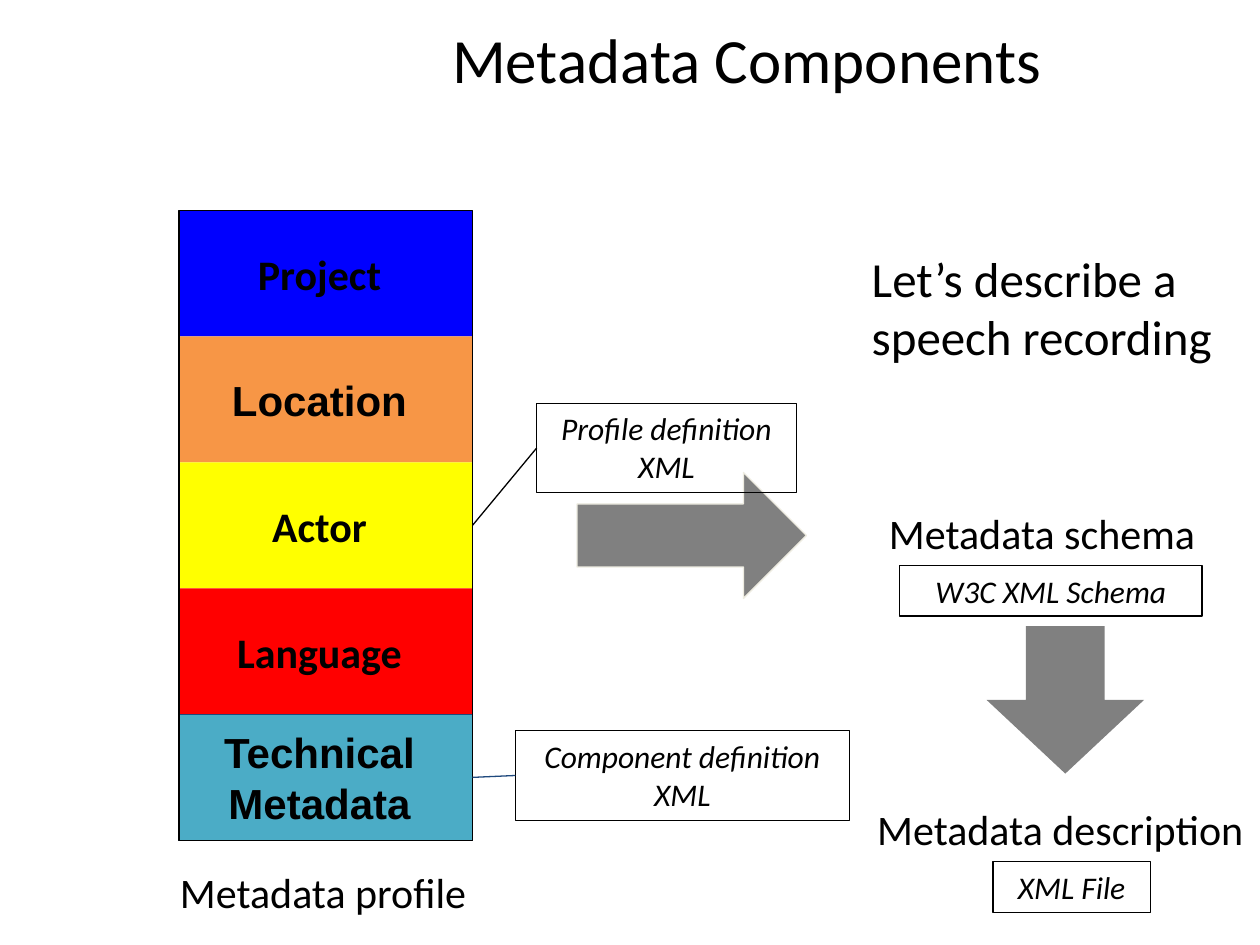
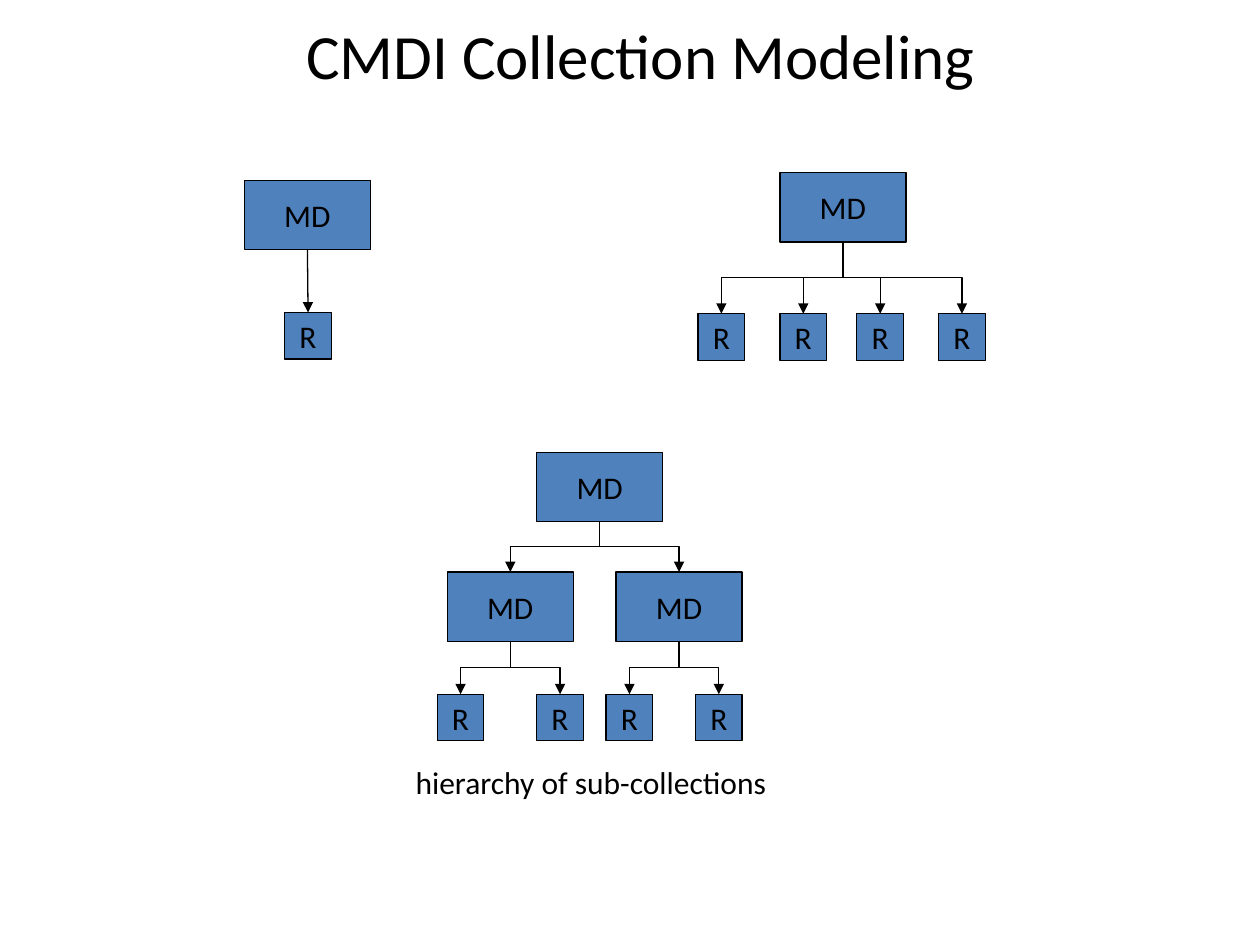
from dataclasses import dataclass

from lxml import etree
from pptx import Presentation
from pptx.dml.color import RGBColor
from pptx.enum.shapes import MSO_CONNECTOR, MSO_SHAPE
from pptx.enum.text import MSO_ANCHOR, MSO_AUTO_SIZE, PP_ALIGN
from pptx.oxml.ns import qn
from pptx.util import Inches, Pt

RECTANGLE = MSO_SHAPE.RECTANGLE
RIGHT_ARROW, DOWN_ARROW = MSO_SHAPE.RIGHT_ARROW, MSO_SHAPE.DOWN_ARROW
STRAIGHT, ELBOW = MSO_CONNECTOR.STRAIGHT, MSO_CONNECTOR.ELBOW
LEFT, CENTER = PP_ALIGN.LEFT, PP_ALIGN.CENTER
TOP, MIDDLE = MSO_ANCHOR.TOP, MSO_ANCHOR.MIDDLE
GROW, FIXED = MSO_AUTO_SIZE.SHAPE_TO_FIT_TEXT, MSO_AUTO_SIZE.NONE
TOP_SIDE, LEFT_SIDE, BOTTOM_SIDE, RIGHT_SIDE = 0, 1, 2, 3


@dataclass(frozen=True)
class Theme:
    font: str = "Calibri"
    band_font: str = "Arial"
    black: str = "000000"
    navy: str = "1F497D"
    node: str = "4F81BD"
    gray: str = "808080"
    cream: str = "EEECE1"
    blue: str = "0000FF"
    orange: str = "F79646"
    yellow: str = "FFFF00"
    red: str = "FF0000"
    teal: str = "4BACC6"
    title: int = 36
    note: int = 28
    label: int = 24
    small: int = 18
    line: float = 0.75


THEME = Theme()


def add_box(slide, place, text="", size=THEME.small, kind=RECTANGLE, fill=None,
            line=None, font=THEME.font, align=CENTER, anchor=TOP,
            wrap=False, grow=False, bold=False, italic=False):
    """Add a preset shape; without fill and line it is a plain label."""
    shape = slide.shapes.add_shape(kind, *map(Inches, place))
    shape.shadow.inherit = False
    for part, color in ((shape.fill, fill), (shape.line.fill, line)):
        if color:
            part.solid()
            part.fore_color.rgb = RGBColor.from_string(color)
        else:
            part.background()
    if line:
        shape.line.width = Pt(THEME.line)
    if text:
        text_frame = shape.text_frame
        text_frame.text = text
        text_frame.word_wrap = wrap
        text_frame.auto_size = GROW if grow else FIXED
        text_frame.vertical_anchor = anchor
        for paragraph in text_frame.paragraphs:
            paragraph.alignment = align
            for run in paragraph.runs:
                run.font.name, run.font.size = font, Pt(size)
                run.font.bold, run.font.italic = bold, italic
                run.font.color.rgb = RGBColor.from_string(THEME.black)
    return shape


def add_link(slide, source, target, sides, color=THEME.black, arrow=False, bent=False):
    """Join two shapes by a straight line, or by a bent one from bottom to top."""
    if bent:
        start_x, start_y = source.left + source.width // 2, source.top + source.height
        run, drop = target.left + target.width // 2 - start_x, target.top - start_y
        # The unturned frame shares its centre with the turned one
        left = start_x + (run - drop) // 2
        top = start_y + (drop - abs(run)) // 2
        ends = (left, left + drop) if run < 0 else (left + drop, left)
        link = slide.shapes.add_connector(ELBOW, ends[0], top, ends[1], top + abs(run))
        turn = 90 if run < 0 else 270
        link._element.spPr.find(qn("a:xfrm")).set("rot", str(turn * 60000))
    else:
        link = slide.shapes.add_connector(STRAIGHT, 0, 0, 0, 0)
        link.begin_connect(source, sides[0])
        link.end_connect(target, sides[1])
    link.line.color.rgb = RGBColor.from_string(color)
    link.line.width = Pt(THEME.line)
    if arrow:
        etree.SubElement(link.line._get_or_add_ln(), qn("a:tailEnd"), type="triangle")
    etree.SubElement(link._element.spPr, qn("a:effectLst"))


presentation = Presentation()
presentation.slide_width, presentation.slide_height = Inches(10), Inches(7.5)
blank = presentation.slide_layouts[6]

# Slide 1: metadata components
slide = presentation.slides.add_slide(blank)
add_box(slide, (1.85, 0, 8.15, 0.92), "Metadata Components", THEME.title,
        anchor=MIDDLE, wrap=True)

# Stack of component bands
band_left, band_top, band_width, band_height = 1.42, 1.67, 2.33, 1
bands = [
    ("Project", THEME.blue, None, THEME.font),
    ("Location", THEME.orange, None, THEME.band_font),
    ("Actor", THEME.yellow, None, THEME.font),
    ("Language", THEME.red, None, THEME.font),
    ("Technical\nMetadata", THEME.teal, THEME.navy, THEME.band_font),
]
for index, (name, fill, line, font) in enumerate(bands):
    band = add_box(slide, (band_left, band_top + index * band_height, band_width, band_height),
                   name, THEME.label, fill=fill, line=line, font=font,
                   anchor=MIDDLE, wrap=True, bold=True)
    band.text_frame.margin_left = 0
technical_band = band

# Block arrows
add_box(slide, (4.58, 3.75, 1.82, 1), kind=RIGHT_ARROW, fill=THEME.gray, line=THEME.cream)
add_box(slide, (7.83, 4.97, 1.25, 1.17), kind=DOWN_ARROW, fill=THEME.gray)

# Labels
labels = [
    ((6.83, 3.98, 2.88, 0.91), "Metadata schema", THEME.label, CENTER),
    ((6.75, 6.33, 3.33, 0.91), "Metadata description", THEME.label, CENTER),
    ((6.82, 1.92, 3.21, 1.04), "Let’s describe a\nspeech recording", THEME.note, LEFT),
    ((1.33, 6.83, 2.62, 0.51), "Metadata profile", THEME.label, LEFT),
]
for place, text, size, align in labels:
    add_box(slide, place, text, size, align=align, grow=True)

# Framed file formats
formats = [
    ((7.14, 4.49, 2.4, 0.4), "W3C XML Schema"),
    ((7.88, 6.84, 1.25, 0.4), "XML File"),
    ((4.09, 5.8, 2.65, 0.71), "Component definition\nXML"),
    ((4.26, 3.2, 2.06, 0.71), "Profile definition\nXML"),
]
*_, component_format, profile_format = [
    add_box(slide, place, text, line=THEME.black, grow=True, italic=True)
    for place, text in formats
]

# Frame around the whole profile, and its callout lines
profile_frame = add_box(slide, (band_left, band_top, band_width, len(bands) * band_height),
                        line=THEME.black)
callout_sides = (RIGHT_SIDE, LEFT_SIDE)
add_link(slide, technical_band, component_format, callout_sides, THEME.navy)
add_link(slide, profile_frame, profile_format, callout_sides)

# Slide 2: collection modeling
slide = presentation.slides.add_slide(blank)
add_box(slide, (0.64, 0.08, 9, 1.25), "CMDI Collection Modeling ", THEME.title, wrap=True)

md_width, md_height, resource_size = 1, 0.55, 0.37
node_style = dict(fill=THEME.node, line=THEME.black, anchor=MIDDLE)
down_sides = (BOTTOM_SIDE, TOP_SIDE)

# Each metadata node with the row of resources below it
collections = [
    ((1.94, 1.43), 2.48, [2.26]),
    ((6.19, 1.37), 2.49, [5.54, 6.19, 6.8, 7.45]),
    ((3.55, 4.54), 5.51, [3.47, 4.26]),
    ((4.89, 4.54), 5.51, [4.81, 5.52]),
]
metadata_nodes = []
for position, resource_top, resource_lefts in collections:
    metadata = add_box(slide, (*position, md_width, md_height), "MD", **node_style)
    metadata_nodes.append(metadata)
    for resource_left in resource_lefts:
        resource = add_box(slide, (resource_left, resource_top, resource_size, resource_size),
                           "R", **node_style)
        add_link(slide, metadata, resource, down_sides, arrow=True,
                 bent=len(resource_lefts) > 1)

# Root of the hierarchy above the last two nodes
root = add_box(slide, (4.26, 3.59, md_width, md_height), "MD", **node_style)
for metadata in metadata_nodes[-2:]:
    add_link(slide, root, metadata, down_sides, arrow=True, bent=True)
add_box(slide, (3.2, 6.01, 3.23, 1.3), "hierarchy of sub-collections", align=LEFT, grow=True)

presentation.save("out.pptx")
